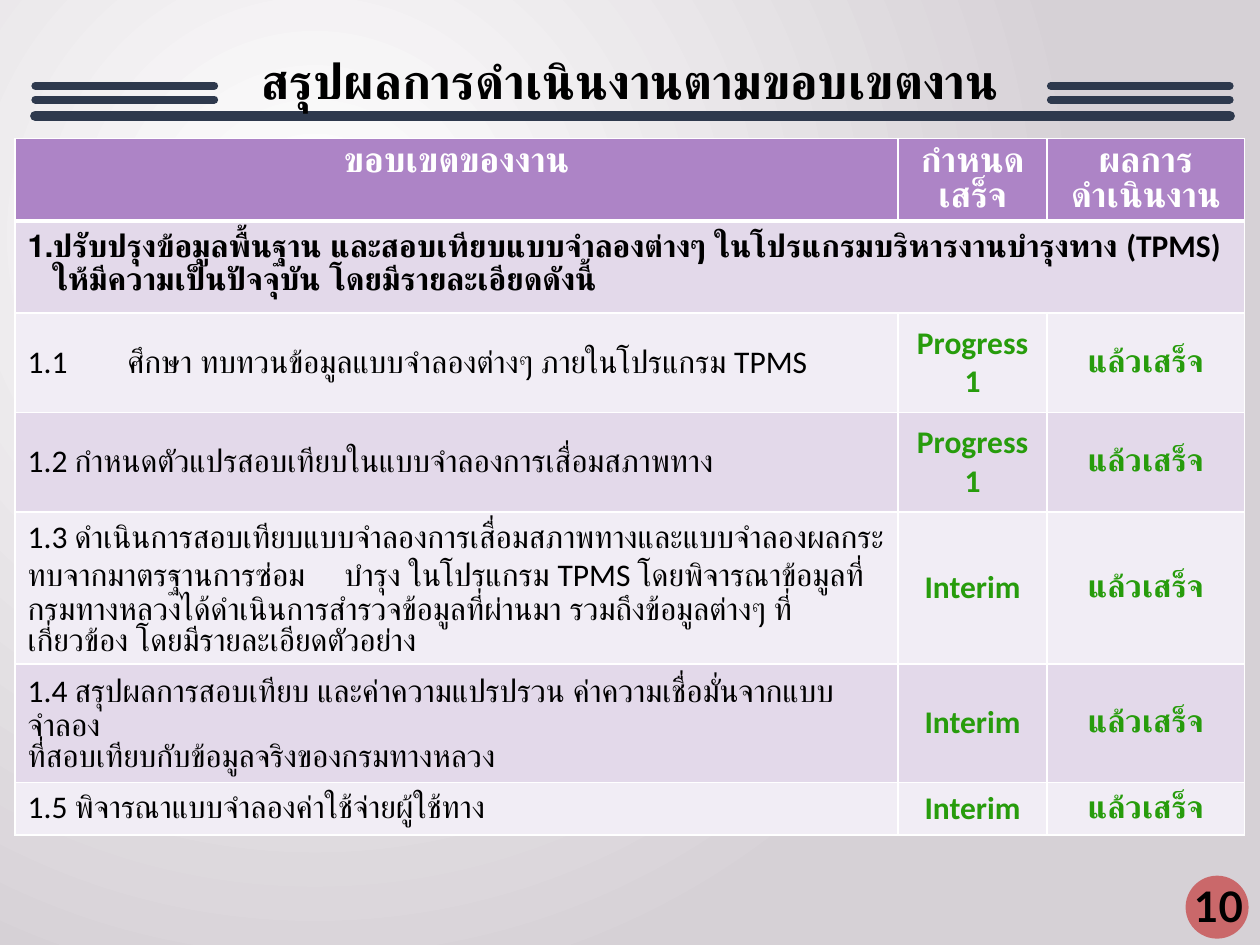
from dataclasses import dataclass

from lxml import etree
from pptx import Presentation
from pptx import util as u
from pptx.dml.color import RGBColor
from pptx.enum import shapes, text
from pptx.oxml import parse_xml
from pptx.oxml.ns import qn

Pt = u.Pt
NS = 'xmlns:a="http://schemas.openxmlformats.org/drawingml/2006/main"'
COLORS = {
    "navy": "2E394D", "badge": "C00000", "header": "AD84C6",
    "dark_band": "E3D9EA", "light_band": "F1EDF5", "done": "279C0C",
    "black": "000000", "white": "FFFFFF", "backdrop": "D6D1D6",
}
DONE = "แล้วเสร็จ"


@dataclass(frozen=True)
class Rule:
    left: float
    right: float
    top: float
    weight: float


@dataclass(frozen=True)
class Task:
    scope: str
    due: str
    height: float
    anchor: str = "MIDDLE"
    hanging: float = 0
    tab: float = 0


HEADINGS = ["ขอบเขตของงาน", "กำหนดเสร็จ", "ผลการดำเนินงาน"]
COLUMN_WIDTHS = [504.7, 85, 113]
HEADER_HEIGHT, SECTION_HEIGHT = 47, 52.6
SECTION = (
    "ปรับปรุงข้อมูลพื้นฐาน และสอบเทียบแบบจำลองต่างๆ ในโปรแกรมบริหารงานบำรุงทาง (TPMS) "
    "ให้มีความเป็นปัจจุบัน โดยมีรายละเอียดดังนี้"
)
TASKS = [
    Task("1.1\tศึกษา ทบทวนข้อมูลแบบจำลองต่างๆ ภายในโปรแกรม TPMS",
         "Progress 1", 56.9, hanging=21),
    Task("1.2 กำหนดตัวแปรสอบเทียบในแบบจำลองการเสื่อมสภาพทาง", "Progress 1", 56.9),
    Task("1.3 ดำเนินการสอบเทียบแบบจำลองการเสื่อมสภาพทางและแบบจำลองผลกระทบจากมาตรฐานการซ่อม"
         "\tบำรุง ในโปรแกรม TPMS โดยพิจารณาข้อมูลที่กรมทางหลวงได้ดำเนินการสำรวจข้อมูลที่ผ่านมา "
         "รวมถึงข้อมูลต่างๆ ที่เกี่ยวข้อง โดยมีรายละเอียดตัวอย่าง",
         "Interim", 86.8, tab=181),
    Task("1.4 สรุปผลการสอบเทียบ และค่าความแปรปรวน ค่าความเชื่อมั่นจากแบบจำลอง\n"
         "ที่สอบเทียบกับข้อมูลจริงของกรมทางหลวง", "Interim", 67.7),
    Task("1.5 พิจารณาแบบจำลองค่าใช้จ่ายผู้ใช้ทาง", "Interim", 30.2, anchor="TOP"),
]
RULES = [Rule(20.2, 702.7, 66.2, 6)] + [
    Rule(left, left + 102.2, top, 4.5)
    for top in (56.9, 49) for left in (600.5, 20.2)
]


def rgb(name: str) -> RGBColor:
    return RGBColor.from_string(COLORS[name])


def write(frame, words: str, *, size: float = 18, font: str = "Calibri",
          color: str = "black", bold: bool = False, align: str = "LEFT",
          hanging: float = 0, tab: float = 0, numbered: bool = False,
          spacing: float | None = None) -> None:
    frame.text = words
    frame.word_wrap = True
    for paragraph in frame.paragraphs:
        props = paragraph._p.get_or_add_pPr()
        if hanging:
            props.set("marL", str(Pt(hanging)))
            props.set("indent", str(-Pt(hanging)))
        if numbered:
            etree.SubElement(props, qn("a:buAutoNum"), type="arabicPeriod")
        if tab:
            stops = etree.SubElement(props, qn("a:tabLst"))
            etree.SubElement(stops, qn("a:tab"), pos=str(Pt(tab)), algn="l")
        paragraph.alignment = text.PP_ALIGN[align]
        if spacing:
            paragraph.line_spacing = Pt(spacing)
        for font_format in [paragraph.font] + [run.font for run in paragraph.runs]:
            font_format.size = Pt(size)
            font_format.name = font
            font_format.bold = bold
            font_format.color.rgb = rgb(color)


def draw_backdrop(slide) -> None:
    slide.background.fill.solid()
    props = slide.background._cSld.bg.bgPr
    props.replace(props[0], parse_xml(
        f'<a:gradFill {NS} rotWithShape="1"><a:gsLst>'
        f'<a:gs pos="0"><a:srgbClr val="{COLORS["white"]}"/></a:gs>'
        f'<a:gs pos="100000"><a:srgbClr val="{COLORS["backdrop"]}"/></a:gs>'
        '</a:gsLst><a:path path="circle">'
        '<a:fillToRect l="50000" t="50000" r="100000" b="100000"/>'
        '</a:path></a:gradFill>'))


def draw_rule(slide, rule: Rule) -> None:
    bar = slide.shapes.add_connector(
        shapes.MSO_CONNECTOR.STRAIGHT,
        Pt(rule.left), Pt(rule.top), Pt(rule.right), Pt(rule.top))
    bar.line.color.rgb = rgb("navy")
    bar.line.width = Pt(rule.weight)
    bar.line._get_or_add_ln().set("cap", "rnd")
    etree.SubElement(bar._element.spPr, qn("a:effectLst"))


def draw_page_number(slide, number: str) -> None:
    badge = slide.shapes.add_shape(
        shapes.MSO_SHAPE.OVAL, Pt(677.5), Pt(500.4), Pt(36), Pt(36))
    badge.shadow.inherit = False
    badge.fill.solid()
    badge.fill.fore_color.rgb = rgb("badge")
    tint = badge._element.spPr.find(".//" + qn("a:srgbClr"))
    etree.SubElement(tint, qn("a:alpha"), val="50000")
    badge.line.fill.background()
    label = slide.shapes.add_textbox(Pt(675.4), Pt(502.6), Pt(41.8), Pt(30.2))
    frame = label.text_frame
    frame.margin_left = frame.margin_right = 0
    frame.vertical_anchor = text.MSO_ANCHOR.MIDDLE
    write(frame, number, size=24, font="Lato", bold=True, align="CENTER")


def style_cell(cell, fill: str, anchor: str = "MIDDLE", top: float = 1,
               bottom: float = 1) -> None:
    cell.vertical_anchor = text.MSO_ANCHOR[anchor]
    if anchor == "MIDDLE":
        cell.margin_top = cell.margin_bottom = 0
    props = cell._tc.get_or_add_tcPr()
    for side, weight in (("L", 1), ("R", 1), ("T", top), ("B", bottom)):
        props.append(parse_xml(
            f'<a:ln{side} {NS} w="{Pt(weight)}"><a:solidFill>'
            f'<a:srgbClr val="{COLORS["white"]}"/></a:solidFill></a:ln{side}>'))
    cell.fill.solid()
    cell.fill.fore_color.rgb = rgb(fill)


def draw_scope_table(slide) -> None:
    heights = [HEADER_HEIGHT, SECTION_HEIGHT] + [task.height for task in TASKS]
    table = slide.shapes.add_table(
        len(heights), len(COLUMN_WIDTHS), Pt(8.6), Pt(79.2),
        Pt(sum(COLUMN_WIDTHS)), Pt(sum(heights))).table
    table.horz_banding = False
    for column, width in zip(table.columns, COLUMN_WIDTHS):
        column.width = Pt(width)
    for row, height in zip(table.rows, heights):
        row.height = Pt(height)

    for index, heading in enumerate(HEADINGS):
        cell = table.cell(0, index)
        style_cell(cell, "header", "TOP", bottom=3)
        write(cell.text_frame, heading, size=20, color="white", bold=True,
              align="CENTER", spacing=19.8)
        style_cell(table.cell(1, index), "dark_band", "TOP", top=3)

    section = table.cell(1, 0)
    section.merge(table.cell(1, len(HEADINGS) - 1))
    write(section.text_frame, SECTION, bold=True, hanging=14.4, tab=28.8, numbered=True)

    for index, task in enumerate(TASKS):
        band = "dark_band" if index % 2 else "light_band"
        scope, due, result = table.rows[index + 2].cells
        style_cell(scope, band, task.anchor)
        write(scope.text_frame, task.scope, hanging=task.hanging, tab=task.tab)
        for cell, words in ((due, task.due), (result, DONE)):
            style_cell(cell, band)
            write(cell.text_frame, words, color="done", bold=True, align="CENTER")


def draw_title(slide, words: str) -> None:
    title = slide.shapes.title
    title.left, title.top, title.width, title.height = Pt(0), Pt(15.1), Pt(720), Pt(51.1)
    title.text_frame.vertical_anchor = text.MSO_ANCHOR.BOTTOM
    title.text_frame.auto_size = text.MSO_AUTO_SIZE.NONE
    write(title.text_frame, words, size=28, bold=True, align="CENTER", spacing=58)
    slide.shapes.element.append(title.element)


def main() -> None:
    deck = Presentation()
    deck.slide_width, deck.slide_height = Pt(720), Pt(540)
    slide = deck.slides.add_slide(deck.slide_layouts.get_by_name("Title Only"))
    draw_backdrop(slide)
    draw_page_number(slide, "10")
    for rule in RULES:
        draw_rule(slide, rule)
    draw_scope_table(slide)
    draw_title(slide, "สรุปผลการดำเนินงานตามขอบเขตงาน")
    deck.save("out.pptx")


if __name__ == "__main__":
    main()
